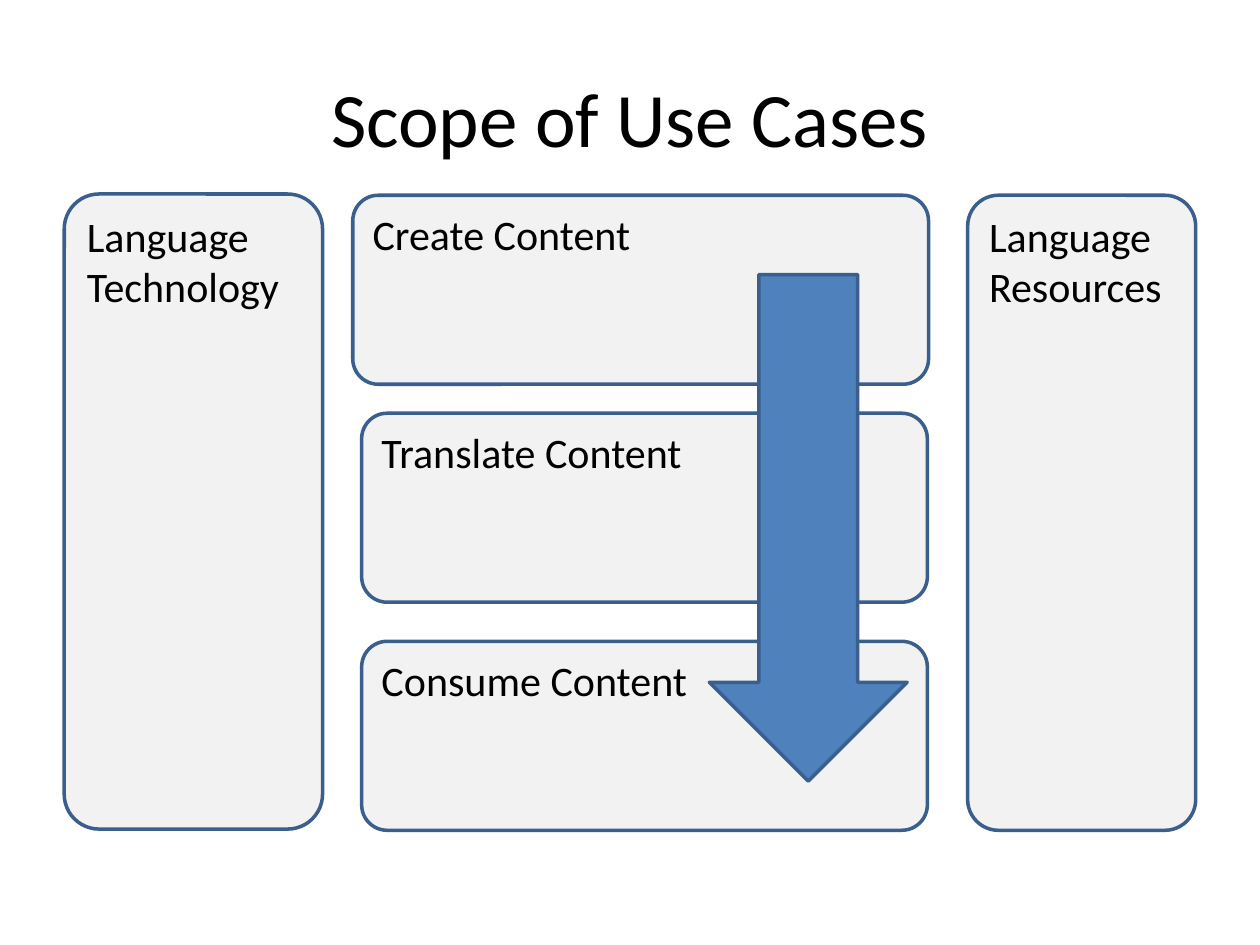
from dataclasses import dataclass

import pptx
import pptx.dml.color
import pptx.enum.shapes
import pptx.enum.text
import pptx.util
from pptx.util import Inches

BLACK = pptx.dml.color.RGBColor(0x00, 0x00, 0x00)
PANEL_GRAY = pptx.dml.color.RGBColor(0xF2, 0xF2, 0xF2)
ARROW_BLUE = pptx.dml.color.RGBColor(0x4F, 0x81, 0xBD)
OUTLINE_BLUE = pptx.dml.color.RGBColor(0x3A, 0x5F, 0x8C)

FONT = "Calibri"
CORNER = 0.135
STAGE_HEIGHT = 1.5
SIDE_HEIGHT = 5.04


@dataclass(frozen=True)
class Box:
    left: float
    top: float
    width: float
    height: float

    def lengths(self) -> tuple:
        return tuple(Inches(n) for n in (self.left, self.top, self.width, self.height))


@dataclass(frozen=True)
class Panel:
    label: str
    box: Box


PANELS = [
    Panel("Create Content", Box(2.8, 1.55, 4.57, STAGE_HEIGHT)),
    Panel("Translate Content", Box(2.87, 3.28, 4.49, STAGE_HEIGHT)),
    Panel("Consume Content", Box(2.87, 5.09, 4.49, STAGE_HEIGHT)),
    Panel("Language Technology", Box(0.51, 1.54, 2.05, SIDE_HEIGHT)),
    Panel("Language Resources", Box(7.68, 1.55, 1.81, SIDE_HEIGHT)),
]
TITLE_BOX = Box(0.5, 0.3, 9, 1.25)
ARROW_BOX = Box(5.63, 2.18, 1.57, 4.02)


def set_text(shape, text: str, size: int, alignment, anchor) -> None:
    frame = shape.text_frame
    frame.text = text
    frame.word_wrap = True
    frame.vertical_anchor = anchor
    paragraph = frame.paragraphs[0]
    paragraph.alignment = alignment
    font = paragraph.runs[0].font
    font.name = FONT
    font.size = pptx.util.Pt(size)
    font.color.rgb = BLACK


def add_outlined(slide, kind, box: Box, fill):
    shape = slide.shapes.add_shape(kind, *box.lengths())
    shape.shadow.inherit = False
    shape.fill.solid()
    shape.fill.fore_color.rgb = fill
    shape.line.color.rgb = OUTLINE_BLUE
    shape.line.width = pptx.util.Pt(2)
    return shape


def add_panel(slide, panel: Panel) -> None:
    kind = pptx.enum.shapes.MSO_SHAPE.ROUNDED_RECTANGLE
    shape = add_outlined(slide, kind, panel.box, PANEL_GRAY)
    shape.adjustments[0] = CORNER
    set_text(shape, panel.label, 24, pptx.enum.text.PP_ALIGN.LEFT,
             pptx.enum.text.MSO_ANCHOR.TOP)


def add_title(slide, text: str) -> None:
    title = slide.shapes.title
    title.left, title.top, title.width, title.height = TITLE_BOX.lengths()
    set_text(title, text, 44, pptx.enum.text.PP_ALIGN.CENTER,
             pptx.enum.text.MSO_ANCHOR.MIDDLE)


def main() -> None:
    presentation = pptx.Presentation()
    presentation.slide_width = Inches(10)
    presentation.slide_height = Inches(7.5)
    slide = presentation.slides.add_slide(presentation.slide_layouts[5])
    add_title(slide, "Scope of Use Cases")
    for panel in PANELS:
        add_panel(slide, panel)
    add_outlined(slide, pptx.enum.shapes.MSO_SHAPE.DOWN_ARROW, ARROW_BOX, ARROW_BLUE)
    presentation.save("out.pptx")


if __name__ == "__main__":
    main()
